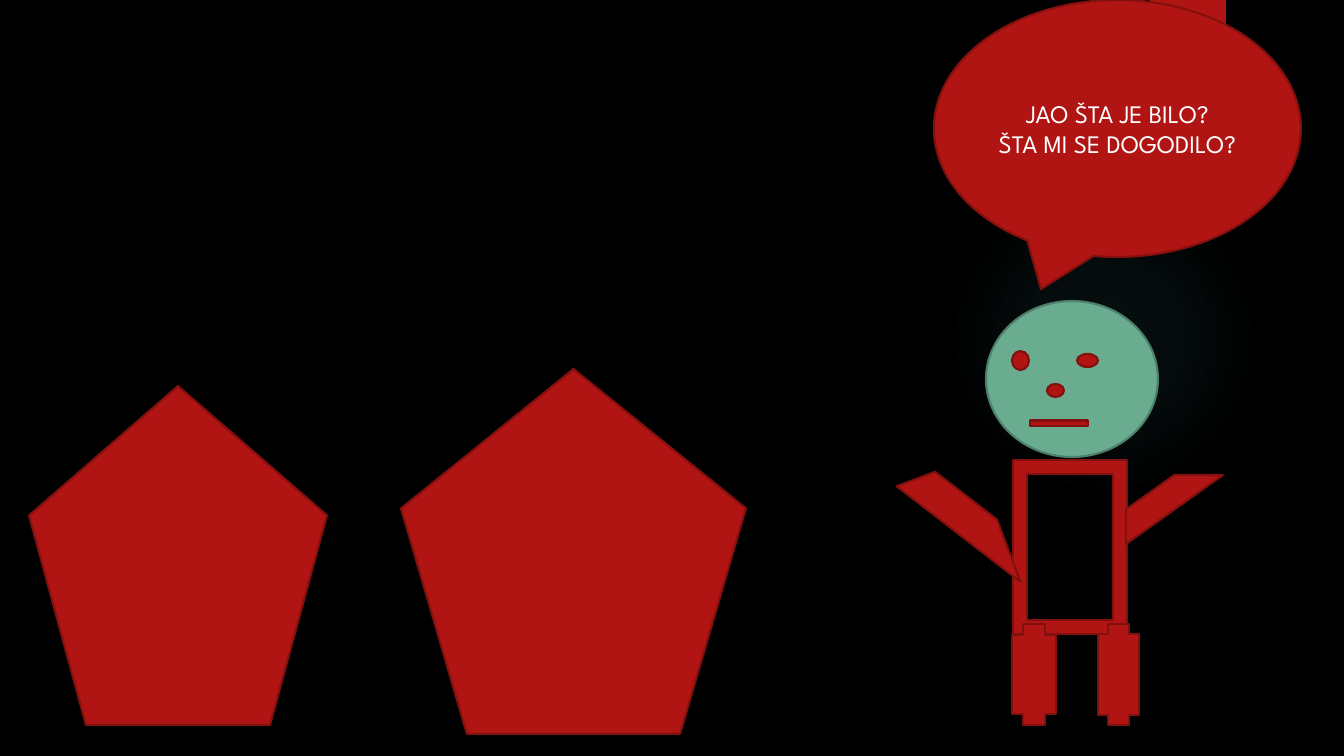
import pptx
import pptx.dml.color
import pptx.enum.shapes
import pptx.enum.text
import pptx.oxml
import pptx.oxml.ns
import pptx.util

KIND = pptx.enum.shapes.MSO_SHAPE
RED, DARK = "B01513", "82100E"
MINT, MOSS = "6AAC90", "4E7F6B"
BLACK, WHITE, GLOW = "000000", "FFFFFF", "50B9C1"


def px(n):
    return pptx.util.Emu(round(n * 914400 / 100.8))


def color(code):
    return pptx.dml.color.RGBColor.from_string(code)


class Deck:
    font = {"name": "League Spartan", "size": pptx.util.Pt(18)}
    frame = {"word_wrap": True,
             "vertical_anchor": pptx.enum.text.MSO_ANCHOR.MIDDLE}

    def __init__(self, wide, high):
        self.file = pptx.Presentation()
        self.file.slide_width, self.file.slide_height = px(wide), px(high)
        self.slide = self.file.slides.add_slide(self.file.slide_layouts[6])
        fill = self.slide.background.fill
        fill.solid()
        fill.fore_color.rgb = color(BLACK)

    def shape(self, kind, box, fill=RED, line=DARK, turn=0, home=None):
        home = home or self.slide
        item = home.shapes.add_shape(kind, *map(px, box))
        item.shadow.inherit = False
        item.rotation = turn
        item.fill.solid()
        item.fill.fore_color.rgb = color(fill)
        if line:
            item.line.color.rgb = color(line)
            item.line.width = pptx.util.Pt(1.5)
        else:
            item.line.fill.background()
        return item

    def glow(self, box, tint, stops):
        item = self.shape(KIND.OVAL, box, line=None)
        marks = "".join(
            f'<a:gs pos="{at * 1000}"><a:srgbClr val="{tint}">'
            f'<a:alpha val="{alpha * 1000}"/></a:srgbClr></a:gs>'
            for at, alpha in stops)
        grad = pptx.oxml.parse_xml(
            f'<a:gradFill {pptx.oxml.ns.nsdecls("a")}><a:gsLst>{marks}</a:gsLst>'
            '<a:path path="circle"><a:fillToRect l="50000" t="50000" '
            'r="50000" b="50000"/></a:path></a:gradFill>')
        props = item.element.spPr
        props.replace(props.find(pptx.oxml.ns.qn("a:solidFill")), grad)

    def group(self, parts):
        home = self.slide.shapes.add_group_shape()
        for kind, box, *look in parts:
            self.shape(kind, box, *look, home=home)

    def bubble(self, box, lines):
        text = self.shape(KIND.OVAL_CALLOUT, box).text_frame
        for name, value in self.frame.items():
            setattr(text, name, value)
        text.text = "\n".join(lines)
        for para in text.paragraphs:
            para.alignment = pptx.enum.text.PP_ALIGN.CENTER
            for name, value in self.font.items():
                setattr(para.font, name, value)
            para.font.color.rgb = color(WHITE)


def main():
    deck = Deck(1344, 756)

    # Backdrop: soft glow and top tab
    deck.glow((949, 184, 310, 310), GLOW, [(0, 7), (36, 6), (69, 0)])
    deck.shape(KIND.RECTANGLE, (1150, 0, 76, 126), line=None)

    # Two rocks
    for box in [(29, 386, 298, 339), (401, 369, 345, 365)]:
        deck.shape(KIND.REGULAR_PENTAGON, box)

    # Figure: head, face, body, legs, arms
    dot = KIND.FLOWCHART_CONNECTOR
    deck.group([
        (KIND.OVAL, (986, 301, 172, 156), MINT, MOSS),
        (dot, (1012, 351, 17, 19)),
        (dot, (1077, 354, 21, 13)),
        (dot, (1047, 384, 17, 13)),
        (KIND.MATH_MINUS, (1020, 411, 78, 25)),
        (KIND.FRAME, (1013, 460, 114, 174)),
        (KIND.CROSS, (1012, 624, 44, 101)),
        (KIND.CROSS, (1098, 624, 41, 101)),
        (KIND.DIAGONAL_STRIPE, (1126, 475, 97, 69)),
        (KIND.DIAGONAL_STRIPE, (892, 493, 133, 82), RED, DARK, 69.3),
    ])

    # Speech
    deck.bubble((934, 0, 367, 257),
                ["JAO ŠTA JE BILO?", "ŠTA MI SE DOGODILO?"])

    deck.file.save("out.pptx")


if __name__ == "__main__":
    main()
